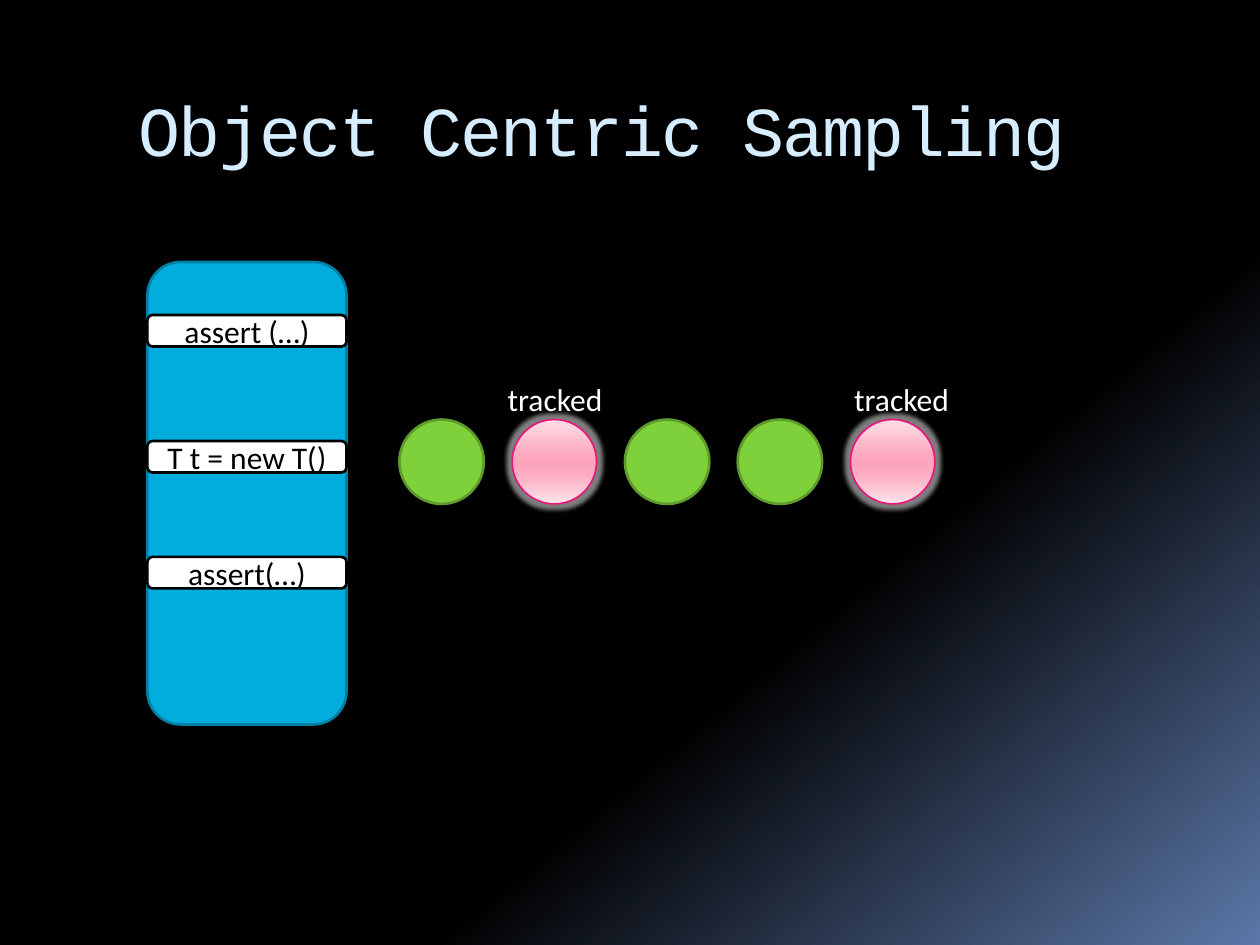
from dataclasses import dataclass
from typing import Optional

import pptx
import pptx.dml.color
import pptx.enum.shapes
import pptx.enum.text
import pptx.oxml
import pptx.oxml.ns
import pptx.oxml.xmlchemy
import pptx.util

Inches, Pt = pptx.util.Inches, pptx.util.Pt
RGBColor = pptx.dml.color.RGBColor
MSO_SHAPE = pptx.enum.shapes.MSO_SHAPE
PP_ALIGN = pptx.enum.text.PP_ALIGN
MSO_ANCHOR = pptx.enum.text.MSO_ANCHOR
qn = pptx.oxml.ns.qn

BLACK = RGBColor(0x00, 0x00, 0x00)
WHITE = RGBColor(0xFF, 0xFF, 0xFF)
PALE_BLUE = RGBColor(0xD6, 0xEC, 0xFF)
SLATE = RGBColor(0x5B, 0x77, 0xA8)
BLUE = RGBColor(0x00, 0xAD, 0xDC)
DARK_BLUE = RGBColor(0x00, 0x80, 0xA3)
GREEN = RGBColor(0x7F, 0xD1, 0x3B)
DARK_GREEN = RGBColor(0x5E, 0x9B, 0x2C)
MAGENTA = RGBColor(0xEA, 0x15, 0x7A)
PINK_EDGE = RGBColor(0xFD, 0xDE, 0xE5)
PINK_MID = RGBColor(0xFD, 0xAB, 0xC0)
PINK_CORE = RGBColor(0xFD, 0xA3, 0xBB)
PINK_END = RGBColor(0xFD, 0xE5, 0xEB)

BACKDROP = [(0, BLACK), (65, BLACK), (100, SLATE)]
PINK = [(0, PINK_EDGE), (40, PINK_MID), (50, PINK_CORE), (65, PINK_MID), (100, PINK_END)]
XMLNS = 'xmlns:a="http://schemas.openxmlformats.org/drawingml/2006/main"'

CODE_LEFT, CODE_WIDTH, BAR_HEIGHT = 1.17, 1.58, 0.25
FIRST_X, LAST_X, OBJECT_Y, OBJECT_SIZE = 3.17, 6.75, 3.33, 0.67
LABEL_Y = 2.97


@dataclass
class Statement:
    text: str
    top: float


@dataclass
class HeapObject:
    label_left: Optional[float] = None  # set only on tracked objects


STATEMENTS = [
    Statement("assert (…)", 2.5),
    Statement("T t = new T()", 3.5),
    Statement("assert(…)", 4.42),
]
OBJECTS = [HeapObject(), HeapObject(3.93), HeapObject(), HeapObject(), HeapObject(6.68)]


def set_gradient(fill, parent_of, stops: list, angle: int) -> None:
    """Swap a solid fill for a linear gradient."""
    fill.solid()
    fill.fore_color.rgb = BLACK
    solid = parent_of().find(qn("a:solidFill"))
    gs = "".join(f'<a:gs pos="{pos * 1000}"><a:srgbClr val="{color}"/></a:gs>'
                 for pos, color in stops)
    solid.getparent().replace(solid, pptx.oxml.parse_xml(
        f'<a:gradFill {XMLNS} rotWithShape="1"><a:gsLst>{gs}</a:gsLst>'
        f'<a:lin ang="{angle * 60000}" scaled="0"/></a:gradFill>'))


def add_glow(sp) -> None:
    effects = sp._element.spPr.find(qn("a:effectLst"))
    effects.append(pptx.oxml.parse_xml(
        f'<a:glow {XMLNS} rad="63500"><a:srgbClr val="{WHITE}">'
        '<a:alpha val="50000"/></a:srgbClr></a:glow>'))


def add_shape(s, kind, left: float, top: float, width: float, height: float,
              fill: RGBColor, line: RGBColor, weight: float = 1.5):
    sp = s.shapes.add_shape(kind, Inches(left), Inches(top), Inches(width), Inches(height))
    sp.shadow.inherit = False
    sp.fill.solid()
    sp.fill.fore_color.rgb = fill
    sp.line.color.rgb = line
    sp.line.width = Pt(weight)
    return sp


def set_text(sp, text: str, font: str, size: float, color: RGBColor):
    p = sp.text_frame.paragraphs[0]
    p.text = text
    r = p.runs[0]
    r.font.name, r.font.size = font, Pt(size)
    r.font.color.rgb = color
    return p


def add_title(s) -> None:
    sp = s.shapes.title
    sp.left, sp.top, sp.width, sp.height = Inches(1), Inches(0.56), Inches(8.5), Inches(1)
    p = set_text(sp, "Object Centric Sampling", "Courier New", 40, PALE_BLUE)
    p.alignment = PP_ALIGN.LEFT
    p.line_spacing = 0.9
    p.runs[0].font._element.set("spc", "-100")
    sp.text_frame.vertical_anchor = MSO_ANCHOR.MIDDLE


def add_statement(s, statement: Statement) -> None:
    sp = add_shape(s, MSO_SHAPE.ROUNDED_RECTANGLE, CODE_LEFT, statement.top,
                   CODE_WIDTH, BAR_HEIGHT, WHITE, BLACK)
    sp.text_frame.vertical_anchor = MSO_ANCHOR.MIDDLE
    set_text(sp, statement.text, "Calibri", 18, BLACK).alignment = PP_ALIGN.CENTER


def add_object(s, left: float, tracked: bool) -> None:
    line, weight = (MAGENTA, 0.94) if tracked else (DARK_GREEN, 1.5)
    sp = add_shape(s, MSO_SHAPE.OVAL, left, OBJECT_Y, OBJECT_SIZE, OBJECT_SIZE,
                   GREEN, line, weight)
    if tracked:
        set_gradient(sp.fill, lambda: sp._element.spPr, PINK, 90)
        add_glow(sp)


def add_label(s, left: float) -> None:
    sp = s.shapes.add_textbox(Inches(left), Inches(LABEL_Y), Inches(0.99), Inches(0.4))
    sp.text_frame.word_wrap = False
    sp.text_frame.auto_size = pptx.enum.text.MSO_AUTO_SIZE.SHAPE_TO_FIT_TEXT
    set_text(sp, "tracked", "Calibri", 18, WHITE)


def main() -> None:
    prs = pptx.Presentation()
    prs.slide_width, prs.slide_height = Inches(10), Inches(7.5)
    s = prs.slides.add_slide(prs.slide_layouts[5])
    set_gradient(s.background.fill, lambda: s._element.find(".//" + qn("p:bgPr")),
                 BACKDROP, 50)
    add_title(s)

    # Code block with its statements
    add_shape(s, MSO_SHAPE.ROUNDED_RECTANGLE, CODE_LEFT, 2.08, CODE_WIDTH, 3.67,
              BLUE, DARK_BLUE)
    for statement in STATEMENTS:
        add_statement(s, statement)

    # Evenly spaced objects, then labels over the tracked ones
    pitch = (LAST_X - FIRST_X) / (len(OBJECTS) - 1)
    for i, obj in enumerate(OBJECTS):
        add_object(s, FIRST_X + i * pitch, obj.label_left is not None)
    for obj in OBJECTS:
        if obj.label_left is not None:
            add_label(s, obj.label_left)

    prs.save("out.pptx")


if __name__ == "__main__":
    main()
